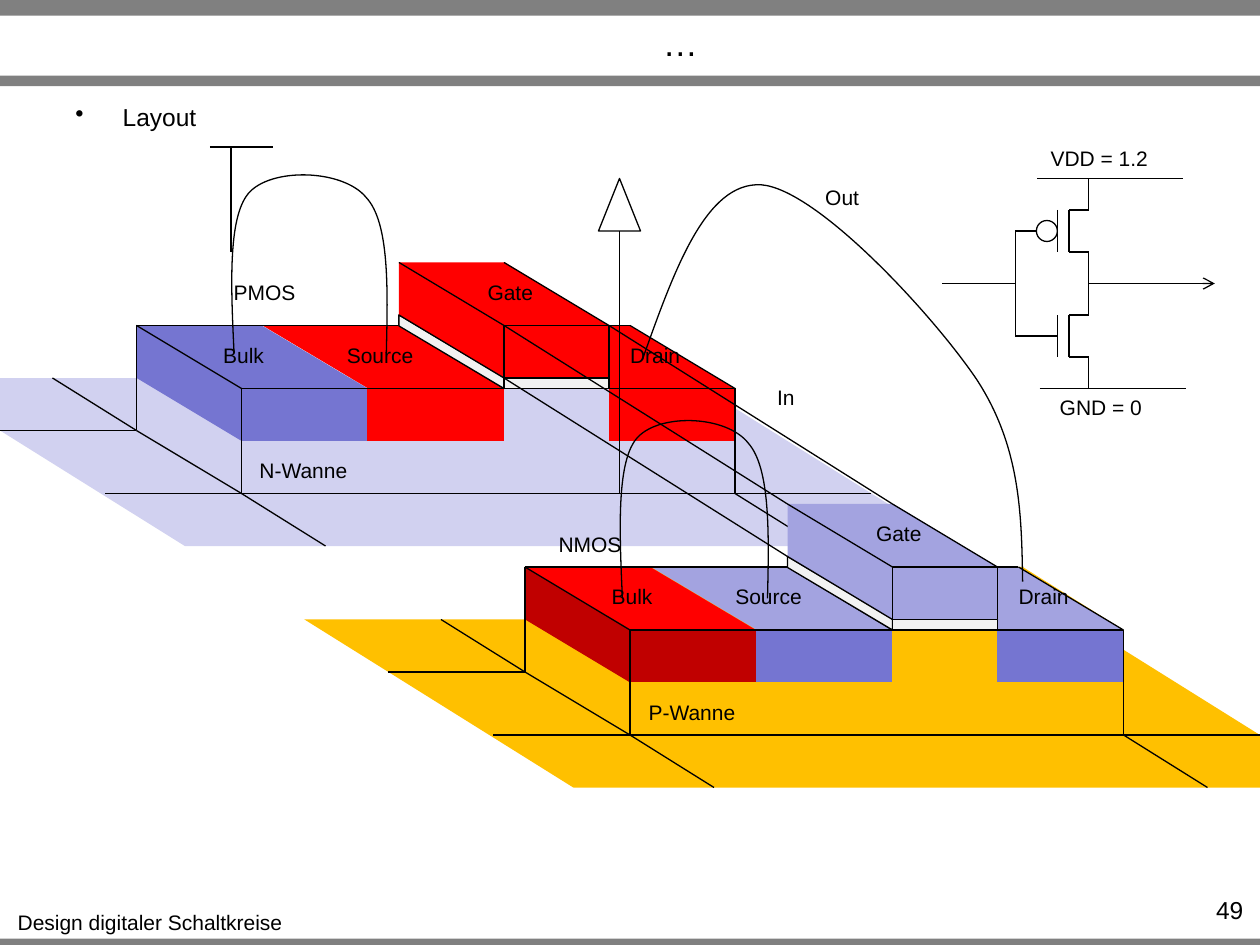
"""Build the slide showing the layout of a CMOS inverter."""
import pptx
import pptx.dml.color
import pptx.enum.shapes
import pptx.enum.text
import pptx.oxml.ns
import pptx.util
from lxml import etree

COLUMNS, ROWS = 120, 90
CELL = pptx.util.Inches(10) // COLUMNS
SHAPE = pptx.enum.shapes.MSO_SHAPE
ALIGN = pptx.enum.text.PP_ALIGN
COLORS = {
    "black": "000000", "white": "FFFFFF", "bar": "808080", "red": "FF0000",
    "dark red": "C00000", "blue": "7575D1", "light blue": "A3A3E0",
    "n well": "D1D1F0", "p well": "FFC000", "oxide": "F2F2F2", "oxide top": "B3B3B3",
}
PMOS = {"at": (13, 31), "name": "PMOS", "name at": (8, -5), "well name": "N-Wanne",
        "well": "n well", "bulk top": "blue", "bulk": "blue",
        "top": "red", "face": "red", "gate": "red"}
NMOS = {"at": (50, 54), "name": "NMOS", "name at": (2, -4), "well name": "P-Wanne",
        "well": "p well", "bulk top": "red", "bulk": "dark red",
        "top": "light blue", "face": "blue", "gate": "light blue"}
BLOCK_EDGES = [
    (0, 0, 0, 10), (10, 6, 10, 16), (0, 0, 47, 0), (-8, 5, 0, 10), (0, 10, 10, 16),
    (10, 16, 57, 16), (57, 6, 57, 16), (10, 6, 57, 6), (57, 6, 47, 0), (10, 16, 18, 21),
    (10, 16, -3, 16), (0, 10, -13, 10), (70, 16, 57, 16), (57, 16, 65, 21),
]
OXIDE_EDGES = [(45, 5, 45, 6), (35, 5, 35, 6), (25, -1, 25, 0), (25, 0, 35, 6)]
GATE_EDGES = [(35, 5, 25, -1), (35, 0, 25, -6), (45, 0, 35, -6)]
LOOP = [(1, 1), (1.01, 0.64), (1.02, 0.27), (0.87, 0.13), (0.72, -0.03),
        (0.25, -0.04), (0.11, 0.11), (-0.02, 0.25), (0, 0.63), (0.02, 1)]
OUT_WIRE = [(61.2, 34.2), (64.2, 25.8), (67.2, 17.3), (72.5, 17.6), (77.8, 18),
            (88.8, 29.9), (93, 36.1), (97.2, 42.5), (97.3, 49), (97.4, 55.4)]


def grid(*cells):
    """Convert grid cells to lengths."""
    return [round(cell * CELL) for cell in cells]


def rgb(color):
    """Look up a named colour."""
    return pptx.dml.color.RGBColor.from_string(COLORS[color])


def paint(shape, fill=None, outlined=False):
    """Set the fill and outline of a shape."""
    shape.shadow.inherit = False
    if fill:
        shape.fill.solid()
        shape.fill.fore_color.rgb = rgb(fill)
    else:
        shape.fill.background()
    if outlined:
        shape.line.color.rgb = rgb("black")
        shape.line.width = pptx.util.Pt(0.75)
    else:
        shape.line.fill.background()
    return shape


def add_preset(slide, preset, box, fill=None, outlined=False):
    """Add a painted preset shape."""
    return paint(slide.shapes.add_shape(preset, *grid(*box)), fill, outlined)


def add_slant(slide, box, slant, fill, outlined=False):
    """Add a parallelogram leaning to the left."""
    plane = add_preset(slide, SHAPE.PARALLELOGRAM, box, fill, outlined)
    plane.adjustments[0] = slant
    plane.element.spPr.xfrm.set("flipH", "1")


def add_outline(slide, corners):
    """Add an outline through the given grid points."""
    start, *rest = [grid(*corner) for corner in corners]
    builder = slide.shapes.build_freeform(*start, scale=1.0)
    builder.add_line_segments(rest, close=False)
    return builder


def add_side(slide, x, y, fill):
    """Add the slanted left side of a block."""
    corners = [(x, y), (x + 10, y + 6), (x + 10, y + 11), (x, y + 5), (x, y)]
    paint(add_outline(slide, corners).convert_to_shape(), fill)


def add_curve(slide, points):
    """Add an open curve of cubic segments."""
    wire = paint(add_outline(slide, points).convert_to_shape(), outlined=True)
    qn = pptx.oxml.ns.qn
    steps = list(wire.element.iter(qn("a:lnTo")))
    for first in range(0, len(steps), 3):
        bend = etree.SubElement(steps[first].getparent(), qn("a:cubicBezTo"))
        for step in steps[first:first + 3]:
            bend.append(step[0])
            step.getparent().remove(step)


def add_line(slide, x1, y1, x2, y2, arrow=False):
    """Add a thin black line."""
    wire = slide.shapes.add_connector(
        pptx.enum.shapes.MSO_CONNECTOR.STRAIGHT, *grid(x1, y1, x2, y2))
    wire.line.color.rgb = rgb("black")
    wire.line.width = pptx.util.Pt(0.75)
    if arrow:
        tail = etree.SubElement(wire.line._get_or_add_ln(), pptx.oxml.ns.qn("a:tailEnd"))
        tail.set("type", "arrow")
    etree.SubElement(wire.element.spPr, pptx.oxml.ns.qn("a:effectLst"))


def add_text(slide, text, box, size=12, align=ALIGN.CENTER, wrap=False):
    """Add a black Arial text."""
    frame = slide.shapes.add_textbox(*grid(*box)).text_frame
    frame.word_wrap = wrap
    frame.text = text
    paragraph = frame.paragraphs[0]
    paragraph.alignment = align
    font = paragraph.runs[0].font
    font.name, font.size = "Arial", pptx.util.Pt(size)
    font.color.rgb = rgb("black")
    return frame


def add_frame(slide):
    """Add the bars, title, bullet, footer and page number."""
    for top, height in ((89.4, 1), (0, 1.5), (7.2, 1)):
        add_preset(slide, SHAPE.RECTANGLE, (0, top, COLUMNS, height), "bar")
    title = add_text(slide, "…", (15.6, 1.7, 98.4, 4.6), 20, wrap=True)
    title.vertical_anchor = pptx.enum.text.MSO_ANCHOR.MIDDLE
    topic = add_text(slide, "Layout", (6, 9.1, 108, 5.9), 14, ALIGN.LEFT, True)
    topic.paragraphs[0].space_before = pptx.util.Pt(2.8)
    bullet = topic.paragraphs[0]._p.get_or_add_pPr()
    bullet.set("marL", str(grid(4.5)[0]))
    bullet.set("indent", str(grid(-4.5)[0]))
    etree.SubElement(bullet, pptx.oxml.ns.qn("a:buChar")).set("char", "•")
    add_text(slide, "Design digitaler Schaltkreise", (0.4, 86, 27.8, 3.6))
    add_text(slide, "49", (109.2, 84.7, 10.4, 2.9), 14, ALIGN.RIGHT, True)


def add_block(slide, device):
    """Add one transistor in three dimensions with its labels."""
    x, y = device["at"]

    def place(left, top, *size):
        return (x + left, y + top, *size)

    def edges(lines):
        for x1, y1, x2, y2 in lines:
            add_line(slide, x + x1, y + y1, x + x2, y + y2)

    if device is NMOS:
        add_slant(slide, place(0, 0, 57, 6), 1.6, device["well"])
    add_slant(slide, place(-21, 5, 99, 16), 1.6, device["well"])
    for left, width, part in ((45, 12, "face"), (22, 13, "face"), (10, 12, "bulk")):
        add_preset(slide, SHAPE.FLOWCHART_PROCESS, place(left, 6, width, 5), device[part])
    for left, width, part in ((35, 22, "top"), (12, 23, "top"), (0, 22, "bulk top")):
        add_slant(slide, place(left, 0, width, 6), 1.68, device[part])
    add_side(slide, x, y, device["bulk"])
    edges(BLOCK_EDGES)

    add_slant(slide, place(25, -1, 20, 6), 1.65, "oxide top", True)
    edges(OXIDE_EDGES)
    oxide_side = add_preset(slide, SHAPE.PARALLELOGRAM, place(26.5, -2.5, 7, 10), "oxide", True)
    oxide_side.adjustments[0] = 0.85
    oxide_side.rotation = 90
    edges([(0, 0, 10, 6)])
    add_side(slide, x + 25, y - 6, device["gate"])
    add_slant(slide, place(25, -6, 20, 6), 1.65, device["gate"])
    add_preset(slide, SHAPE.RECTANGLE, place(35, 0, 10, 5), device["gate"], True)
    edges(GATE_EDGES)
    add_preset(slide, SHAPE.FLOWCHART_PROCESS, place(35, 5, 10, 1), "oxide", True)

    for text, left, top, width in (
            ("Bulk", 7, 1, 6.4), ("Source", 18.8, 1, 8.8), ("Drain", 45.8, 1, 7.2),
            ("Gate", 32.2, -5, 6.8), (device["well name"], 10.5, 12, 10.8),
            (device["name"], *device["name at"], 8.4)):
        add_text(slide, text, place(left, top, width, 3.6))


def add_symbol(slide, side):
    """Add a transistor symbol above (-1) or below (1) the output row."""
    drain, gate, source, rail = (27 + side * step for step in (3, 5, 7, 10))
    for wire in ((103.7, source, 101.8, source), (101.8, source, 101.8, drain),
                 (98.7, gate, 100.7, gate), (100.7, source, 100.7, drain),
                 (103.7, drain, 101.8, drain), (103.7, drain, 103.7, 27),
                 (103.7, rail, 103.7, source), (98.7, gate, 96.7, gate)):
        add_line(slide, *wire)


def add_circuit(slide):
    """Add the inverter circuit diagram."""
    add_line(slide, 99, 37, 113, 37)
    add_line(slide, 98.8, 17, 112.7, 17)
    add_text(slide, "VDD = 1.2", (98.8, 13.3, 11.8, 3.6))
    add_text(slide, "GND = 0", (99.7, 37, 10.3, 3.6))
    add_line(slide, 103.7, 27, 115.7, 27, arrow=True)
    add_line(slide, 96.7, 27, 89.7, 27)
    for side in (1, -1):
        add_symbol(slide, side)
    add_preset(slide, SHAPE.OVAL, (98.7, 21, 2, 2), "white", True)
    add_line(slide, 96.7, 22, 96.7, 32)


def add_wiring(slide):
    """Add the wires between the transistors and the supplies."""
    for x, y in ((48, 31), (48, 36), (58, 31)):
        add_line(slide, x, y, x + 27, y + 17)
    add_curve(slide, OUT_WIRE)
    for left, top, width in ((22, 16.6, 14.8), (59, 40, 14.1)):
        add_curve(slide, [(left + width * x, top + 17 * y) for x, y in LOOP])
    for wire in ((22, 24, 22, 14), (59, 47, 59, 22), (20, 14, 26, 14)):
        add_line(slide, *wire)
    add_preset(slide, SHAPE.ISOSCELES_TRIANGLE, (57, 17, 4, 5), outlined=True)
    add_text(slide, "Out", (77.4, 17, 5.6, 3.6))
    add_text(slide, "In", (72.8, 36, 4.1, 3.6))


def main():
    """Build and save the slide."""
    deck = pptx.Presentation()
    deck.slide_width, deck.slide_height = grid(COLUMNS, ROWS)
    slide = deck.slides.add_slide(deck.slide_layouts[6])
    add_frame(slide)
    for device in (PMOS, NMOS):
        add_block(slide, device)
    add_circuit(slide)
    add_wiring(slide)
    deck.save("out.pptx")


if __name__ == "__main__":
    main()
